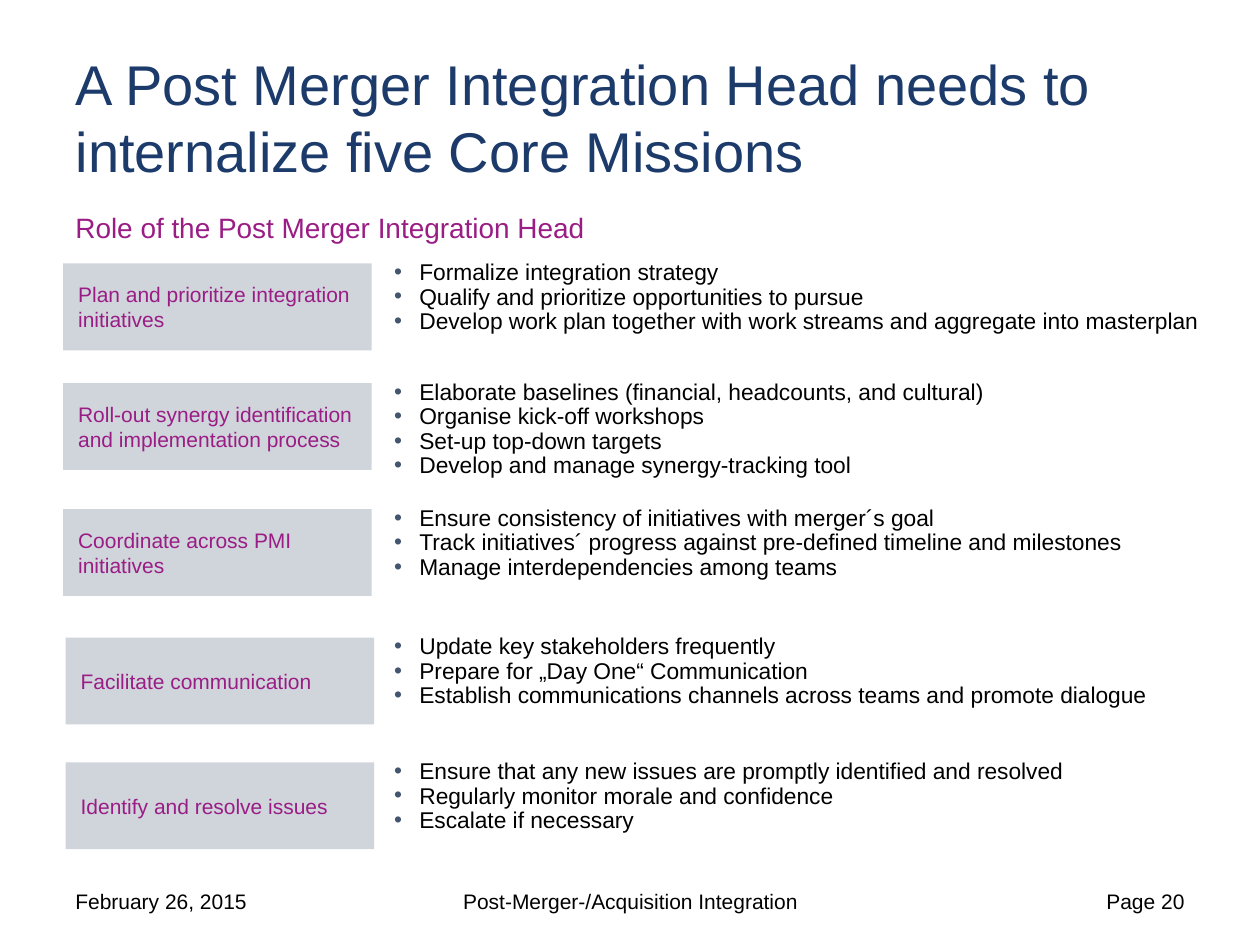
"""Build the slide on the five core missions of an integration head."""
from lxml.etree import SubElement
from pptx import Presentation
from pptx.dml.color import RGBColor
from pptx.enum.shapes import MSO_SHAPE as Shape
from pptx.enum.text import MSO_ANCHOR as Anchor, PP_ALIGN as Align
from pptx.oxml.ns import qn
from pptx.util import Inches, Pt

NAVY = RGBColor(0x1C, 0x3B, 0x6B)
PLUM = RGBColor(0x99, 0x1D, 0x85)
GREY = RGBColor(0xD0, 0xD4, 0xDB)
BLACK = RGBColor(0, 0, 0)
DOT = "43556F"

TITLE = "A Post Merger Integration Head needs to internalize five Core Missions"
ROLE = "Role of the Post Merger Integration Head"
MISSIONS = [
    (2.09, 0.5, "Plan and prioritize integration initiatives", [
        "Formalize integration strategy",
        "Qualify and prioritize opportunities to pursue",
        "Develop work plan together with work streams and aggregate into masterplan"]),
    (3.04, 0.5, "Roll-out synergy identification and implementation process", [
        "Elaborate baselines (financial, headcounts, and cultural)",
        "Organise kick-off workshops",
        "Set-up top-down targets",
        "Develop and manage synergy-tracking tool"]),
    (4.04, 0.5, "Coordinate across PMI initiatives", [
        "Ensure consistency of initiatives with merger´s goal",
        "Track initiatives´ progress against pre-defined timeline and milestones",
        "Manage interdependencies among teams"]),
    (5.06, 0.52, "Facilitate communication", [
        "Update key stakeholders frequently",
        "Prepare for „Day One“ Communication",
        "Establish communications channels across teams and promote dialogue"]),
    (6.05, 0.52, "Identify and resolve issues", [
        "Ensure that any new issues are promptly identified and resolved",
        "Regularly monitor morale and confidence",
        "Escalate if necessary"]),
]
FOOT = [
    (0.5, 2.33, "February 26, 2015", Align.LEFT),
    (3.42, 3.17, "Post-Merger-/Acquisition Integration", Align.CENTER),
    (7.17, 2.33, "Page 20", Align.RIGHT),
]


def write(shape, lines, size, color, anchor=Anchor.TOP, align=Align.LEFT):
    """Fill a shape with styled paragraphs."""
    frame = shape.text_frame
    frame.word_wrap = True
    frame.vertical_anchor = anchor
    frame.text = "\n".join(lines)
    for para in frame.paragraphs:
        para.alignment = align
        for run in para.runs:
            run.font.name = "Arial"
            run.font.size = Pt(size)
            run.font.color.rgb = color


def add_text(slide, box, *style):
    """Add a text box at a place given in inches."""
    shape = slide.shapes.add_textbox(*map(Inches, box))
    write(shape, *style)
    return shape


def add_dot(para):
    """Give a paragraph a hanging bullet."""
    para.line_spacing = Pt(14)
    props = para._p.get_or_add_pPr()
    props.set("marL", str(Inches(0.2)))
    props.set("indent", str(-Inches(0.2)))
    color = SubElement(props, qn("a:buClr"))
    SubElement(color, qn("a:srgbClr"), val=DOT)
    SubElement(props, qn("a:buFont"), typeface="Arial")
    SubElement(props, qn("a:buChar"), char="•")


def add_label(slide, left, top, label):
    """Add the grey box that names a mission."""
    box = map(Inches, (left, top, 2.45, 0.69))
    shape = slide.shapes.add_shape(Shape.RECTANGLE, *box)
    shape.shadow.inherit = False
    shape.fill.solid()
    shape.fill.fore_color.rgb = GREY
    shape.line.fill.background()
    write(shape, [label], 12, PLUM, Anchor.MIDDLE)
    frame = shape.text_frame
    frame.margin_left = Inches(0.12)
    frame.margin_right = frame.margin_top = frame.margin_bottom = 0


def main():
    """Lay out the slide and save it."""
    deck = Presentation()
    deck.slide_width, deck.slide_height = Inches(10), Inches(7.5)
    slide = deck.slides.add_slide(deck.slide_layouts[5])
    title = slide.shapes.title
    title.left, title.top, title.width, title.height = map(Inches, (0.5, 0.3, 9, 1.25))
    write(title, [TITLE], 32, NAVY, Anchor.MIDDLE)
    add_text(slide, (0.5, 1.62, 5.92, 0.39), [ROLE], 16, PLUM)
    for top, left, label, tasks in MISSIONS:
        add_label(slide, left, top, label)
        box = 3.03, top - 0.07, 6.85, 0.1 + 0.2 * len(tasks)
        for para in add_text(slide, box, tasks, 13, BLACK).text_frame.paragraphs:
            add_dot(para)
    for left, width, text, align in FOOT:
        add_text(slide, (left, 6.95, width, 0.4), [text], 12, BLACK, Anchor.MIDDLE, align)
    deck.save("out.pptx")


if __name__ == "__main__":
    main()
